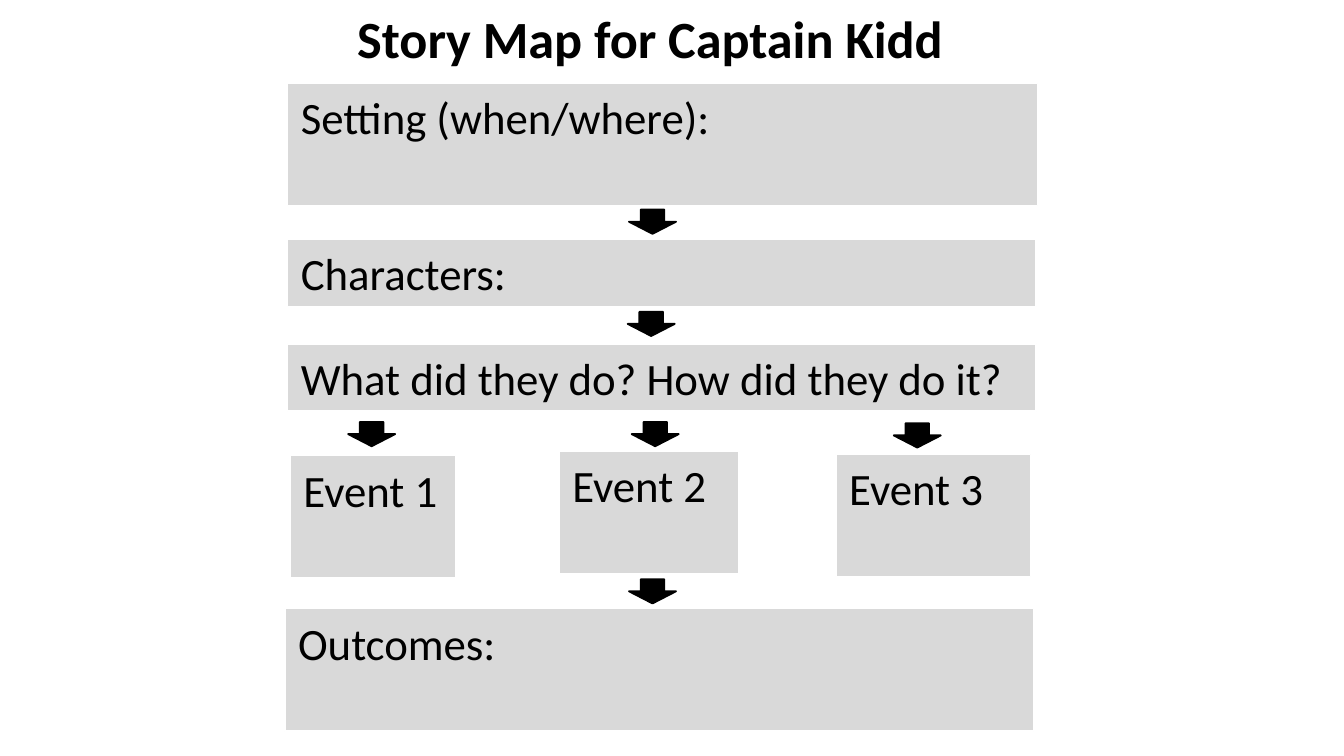
from pptx import Presentation
from pptx.dml.color import RGBColor
from pptx.enum.shapes import MSO_SHAPE as Shape
from pptx.enum.text import MSO_ANCHOR as Anchor, PP_ALIGN as Align
from pptx.util import Inches, Pt

BLACK = RGBColor(0, 0, 0)
WHITE = RGBColor(255, 255, 255)
GREY = RGBColor(217, 217, 217)


def write(shape, text, size, bold=False):
    """Put one left-aligned line of text at the top of a shape."""
    frame = shape.text_frame
    frame.word_wrap = True
    frame.vertical_anchor = Anchor.TOP
    para = frame.paragraphs[0]
    para.text = text
    para.alignment = Align.LEFT
    font = para.font
    font.name, font.size, font.bold = "Calibri", Pt(size), bold
    font.color.rgb = BLACK


def add_form(slide, kind, box, fill, line, width):
    """Add a flat preset shape in the given box of inches."""
    shape = slide.shapes.add_shape(kind, *map(Inches, box))
    shape.shadow.inherit = False
    shape.fill.solid()
    shape.fill.fore_color.rgb = fill
    shape.line.color.rgb = line
    shape.line.width = Pt(width)
    return shape


def add_title(slide, box, text):
    """Add the bold slide heading."""
    write(slide.shapes.add_textbox(*map(Inches, box)), text, 28, True)


def add_panel(slide, box, text):
    """Add a grey panel with its label."""
    write(add_form(slide, Shape.RECTANGLE, box, GREY, WHITE, 0.75), text, 24)


def add_arrow(slide, left, top):
    """Add a small black arrow that points down."""
    box = left, top, 0.35, 0.18
    add_form(slide, Shape.DOWN_ARROW, box, BLACK, BLACK, 1)


def add_steps(slide, box):
    """Stack the setting, characters and question panels with arrows between."""
    left, top, width, _ = box
    add_panel(slide, (left, top, width + 0.01, 0.91), "Setting (when/where):")
    add_panel(slide, (left, top + 1.16, width, 0.5), "Characters:")
    ask = "What did they do? How did they do it?"
    add_panel(slide, (left, top + 1.94, width, 0.5), ask)
    for shift, drop in ((2.54, 0.94), (2.53, 1.7)):
        add_arrow(slide, left + shift, top + drop)


def add_events(slide, box):
    """Set three event panels side by side, each under its arrow."""
    left, top, _, height = box
    spots = [(0, 0.25, 1.23, 0.43, 0), (2, 0.22, 1.34, 2.54, 0),
             (4.06, 0.24, 1.45, 4.49, 0.01)]
    for num, (shift, drop, width, aim, dip) in enumerate(spots, 1):
        panel = left + shift, top + drop, width, height - 0.25
        add_panel(slide, panel, f"Event {num}")
        add_arrow(slide, left + aim, top + dip)


def add_outcome(slide, box):
    """Add the closing arrow and the outcomes panel below it."""
    left, top, width, height = box
    add_arrow(slide, left + 2.56, top)
    add_panel(slide, (left, top + 0.22, width, height - 0.22), "Outcomes:")


def main():
    """Build the story map slide and save it."""
    deck = Presentation()
    deck.slide_width = Inches(10)
    deck.slide_height = deck.slide_width * 9 // 16
    slide = deck.slides.add_slide(deck.slide_layouts[6])
    add_title(slide, (2.56, 0, 4.57, 0.57), "Story Map for Captain Kidd")
    add_steps(slide, (2.14, 0.62, 5.57, 2.44))
    add_events(slide, (2.16, 3.14, 5.51, 1.16))
    add_outcome(slide, (2.12, 4.31, 5.57, 1.13))
    deck.save("out.pptx")


if __name__ == "__main__":
    main()
